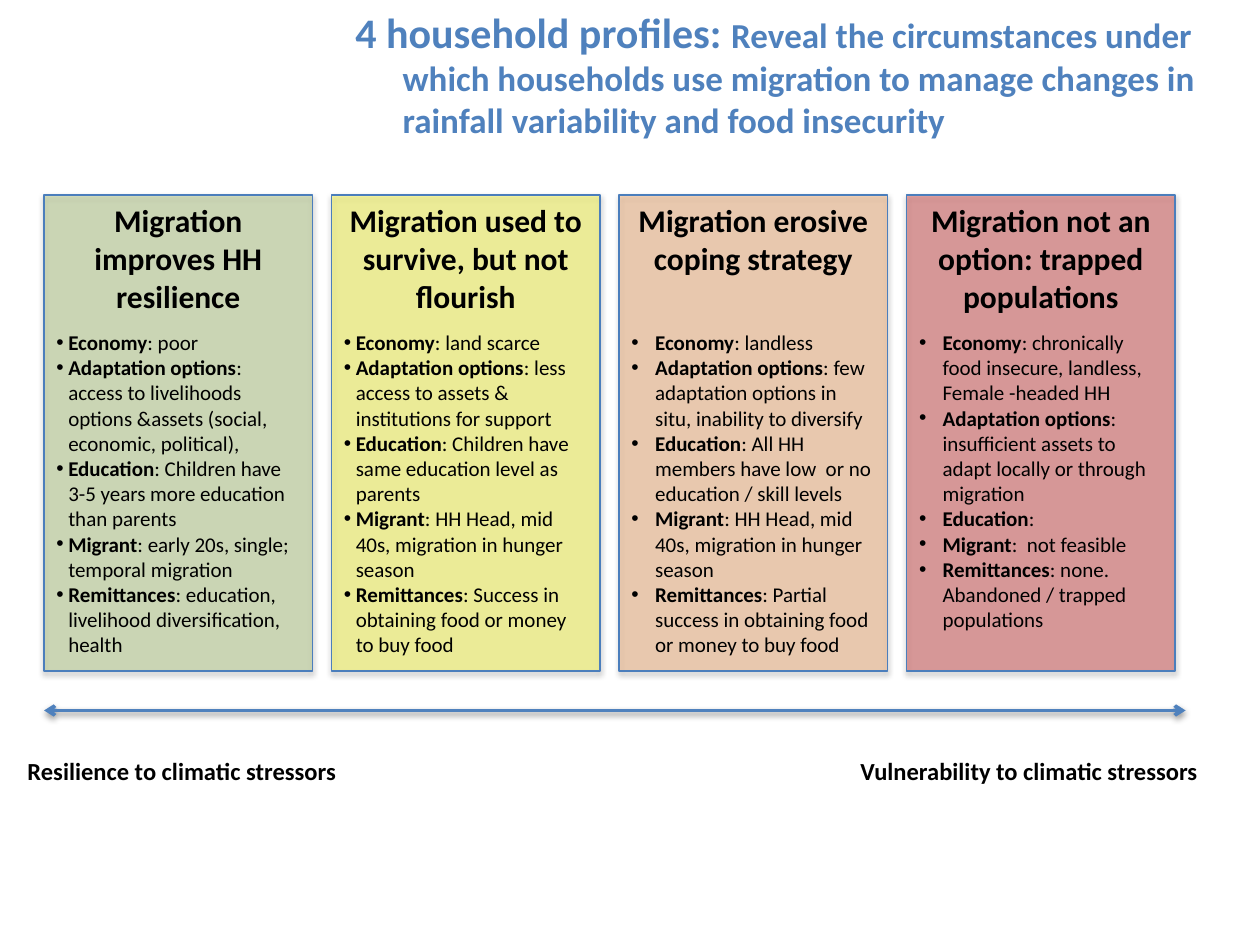
from lxml.etree import SubElement as Sub
from pptx import Presentation
from pptx.dml.color import RGBColor as RGB
from pptx.enum.shapes import MSO_CONNECTOR as Link, MSO_SHAPE as Form
from pptx.enum.text import PP_ALIGN as Align
from pptx.oxml.ns import qn
from pptx.util import Pt

HUES = {
    "ink": "000000", "blue": "4F81BD", "edge": "4B7EBC",
    "green": "9BBB59", "yellow": "FFFF00", "orange": "F79646", "red": "C00000",
}
TOPICS = ["Economy", "Adaptation options", "Education", "Migrant", "Remittances"]
CARDS = [
    ("green", "Migration improves HH resilience", 6.75, [
        "poor",
        "access to livelihoods options &assets (social, economic, political),",
        "Children have 3-5 years more education than parents",
        "early 20s, single; temporal migration",
        "education, livelihood diversification, health"]),
    ("yellow", "Migration used to survive, but not flourish", 6.75, [
        "land scarce",
        "less access to assets & institutions for support",
        "Children have same education level as parents",
        "HH Head, mid 40s, migration in hunger season",
        "Success in obtaining food or money to buy food"]),
    ("orange", "Migration erosive coping strategy", 13.5, [
        "landless",
        "few adaptation options in situ, inability to diversify",
        "All HH members have low  or no education / skill levels",
        "HH Head, mid 40s, migration in hunger season",
        "Partial success in obtaining food or money to buy food"]),
    ("red", "Migration not an option: trapped populations", 13.5, [
        "chronically food insecure, landless, Female -headed HH",
        "insufficient assets to adapt locally or through migration",
        "",
        " not feasible",
        "none. Abandoned / trapped populations"]),
]


def shade(item, alpha, dist):
    """Give a shape or connector a soft shadow below it."""
    props = item._element.spPr
    for old in props.findall(qn("a:effectLst")):
        props.remove(old)
    glow = Sub(Sub(props, qn("a:effectLst")), qn("a:outerShdw"),
               blurRad=str(Pt(3.1)), dist=str(Pt(dist)), dir="5400000", rotWithShape="0")
    tone = Sub(glow, qn("a:srgbClr"), val=HUES["ink"])
    Sub(tone, qn("a:alpha"), val=str(alpha * 1000))


def frame(slide, x, y, w, h):
    """Add a wrapping text box and return its text frame."""
    text = slide.shapes.add_textbox(Pt(x), Pt(y), Pt(w), Pt(h)).text_frame
    text.word_wrap = True
    return text


def write(para, words, size, bold=True, hue="ink"):
    """Add one styled run to a paragraph."""
    run = para.add_run()
    run.text = words
    font = run.font
    font.name, font.size, font.bold = "Calibri", Pt(size), bold
    font.color.rgb = RGB.from_string(HUES[hue])


def hang(para, gap, mark=None):
    """Set a hanging indent and, if given, a bullet mark."""
    props = para._p.get_or_add_pPr()
    props.set("marL", str(Pt(gap)))
    props.set("indent", str(-Pt(gap)))
    if mark:
        Sub(props, qn("a:buFont"), typeface="Arial")
        Sub(props, qn("a:buChar"), char=mark)


def title(slide, x, y, w, h):
    """Write the slide title."""
    para = frame(slide, x, y, w, h).paragraphs[0]
    hang(para, 27)
    write(para, "4 household profiles: ", 24, hue="blue")
    write(para, "Reveal the circumstances under which households use migration "
          "to manage changes in rainfall variability and food insecurity", 20, hue="blue")


def card(slide, x, y, w, h, hue, head, gap, facts):
    """Draw one household profile with its heading and facts."""
    box = slide.shapes.add_shape(Form.RECTANGLE, Pt(x), Pt(y), Pt(w), Pt(h))
    box.fill.solid()
    box.fill.fore_color.rgb = RGB.from_string(HUES[hue])
    tone = box._element.spPr.find(qn("a:solidFill")).find(qn("a:srgbClr"))
    Sub(tone, qn("a:alpha"), val="33000")
    box.line.color.rgb = RGB.from_string(HUES["edge"])
    box.line.width = Pt(0.75)
    shade(box, 35, 1.8)

    para = frame(slide, x, y, w, 72.7).paragraphs[0]
    para.alignment = Align.CENTER
    write(para, head, 18)

    text = frame(slide, x, y + 73.3, w, h - 75.6)
    for i, (topic, fact) in enumerate(zip(TOPICS, facts)):
        para = text.add_paragraph() if i else text.paragraphs[0]
        hang(para, gap, "•")
        write(para, topic, 12)
        write(para, f": {fact}" if fact else ":", 12, False)


def scale(slide, x, y, w):
    """Draw the double arrow with a label under each end."""
    line = slide.shapes.add_connector(Link.STRAIGHT, Pt(x), Pt(y), Pt(x + w), Pt(y))
    line.line.color.rgb = RGB.from_string(HUES["blue"])
    line.line.width = Pt(2)
    for end in ("a:headEnd", "a:tailEnd"):
        Sub(line.line._get_or_add_ln(), qn(end), type="arrow")
    shade(line, 38, 1.6)
    for left, words in ((-16.6, "Resilience"), (459.4, "Vulnerability")):
        para = frame(slide, x + left, y + 22.4, 215.3, 24.2).paragraphs[0]
        write(para, f"{words} to climatic stressors", 14)


def main():
    """Build and save the slide."""
    deck = Presentation()
    deck.slide_width, deck.slide_height = Pt(720), Pt(540)
    slide = deck.slides.add_slide(deck.slide_layouts[6])
    scale(slide, 25.2, 406, 652.3)
    for i, parts in enumerate(CARDS):
        card(slide, 25.2 + i * 164.3, 111.4, 153.4, 272, *parts)
    title(slide, 196, 0, 524, 34)
    deck.save("out.pptx")


if __name__ == "__main__":
    main()
